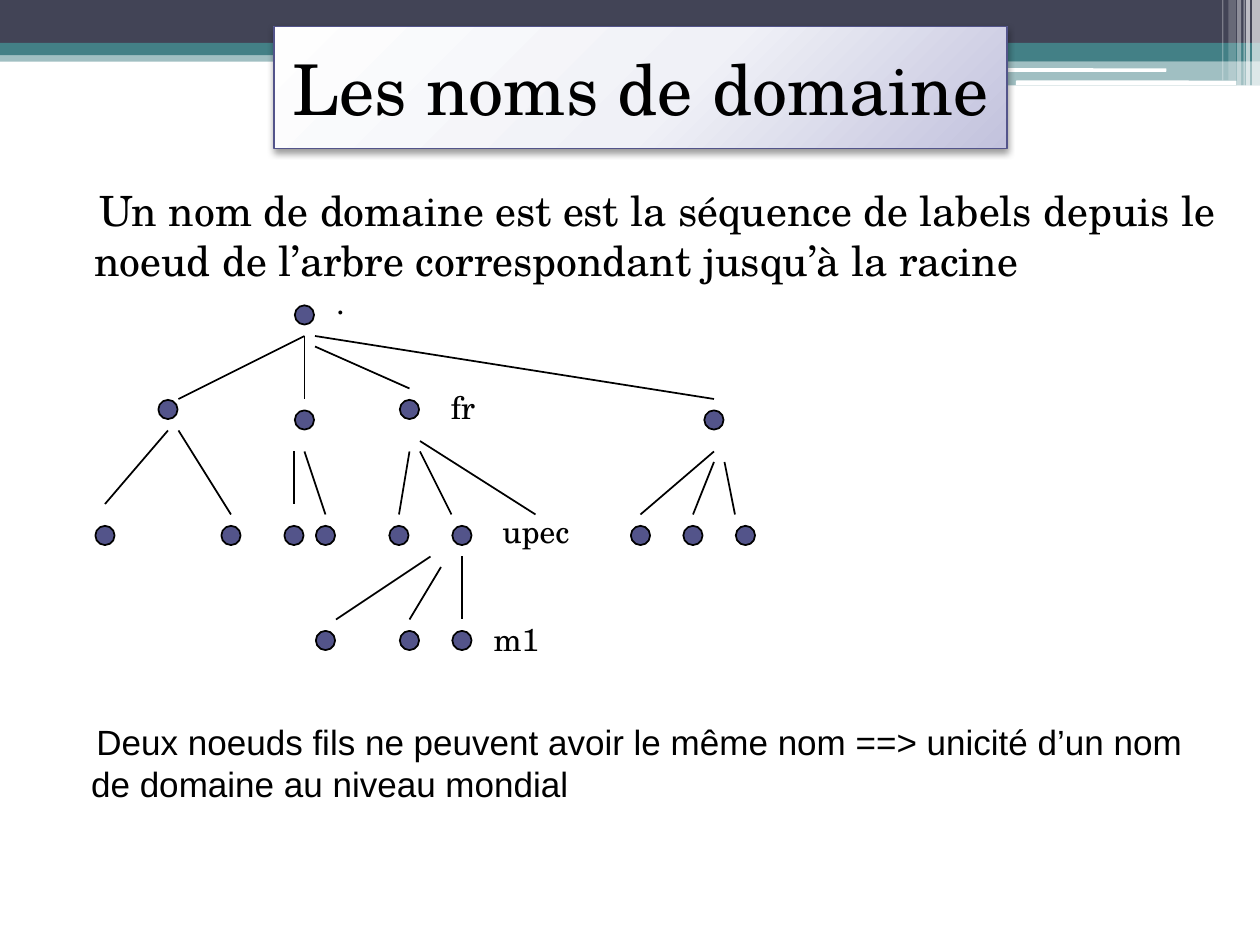
from dataclasses import dataclass
from typing import NamedTuple

from lxml.etree import SubElement
from pptx import Presentation
from pptx.dml.color import RGBColor
from pptx.enum.shapes import MSO_CONNECTOR, MSO_SHAPE
from pptx.enum.text import MSO_ANCHOR, MSO_AUTO_SIZE, PP_ALIGN
from pptx.oxml import parse_xml
from pptx.oxml.ns import nsdecls, qn
from pptx.util import Pt


@dataclass(frozen=True)
class Theme:
    ink: str = "000000"
    dark: str = "424456"
    teal: str = "438086"
    white: str = "FFFFFF"
    dot: str = "53548A"
    fade: tuple = ((0, "FEFEFE"), (55, "F0F1F7"), (100, "C2C2DD"))
    serif: str = "TeX Gyre Schola"
    sans: str = "Arial"
    head: float = 40
    lead: float = 23.8
    note: float = 20
    label: float = 18


class Box(NamedTuple):
    left: float
    top: float
    width: float
    height: float


class Bar(NamedTuple):
    box: Box
    hue: str
    alpha: int = 100
    kind: MSO_SHAPE = MSO_SHAPE.RECTANGLE


class Label(NamedTuple):
    text: str
    box: Box


class Edge(NamedTuple):
    x: int
    y: int
    ends: tuple


T = Theme()
STEP = 6
SIZE = 11
ROUND = MSO_SHAPE.ROUNDED_RECTANGLE

BARS = [
    Bar(Box(0, 28.8, 720, 6.5), T.teal, 50),
    Bar(Box(0, 0, 720, 24.5), T.dark),
    Bar(Box(0, 24.5, 720, 7), T.teal),
    Bar(Box(426, 28, 294, 7), T.teal),
    Bar(Box(426, 34.6, 294, 14.2), T.teal, 50),
    Bar(Box(425.5, 39, 241, 2), T.white, 100, ROUND),
    Bar(Box(580.5, 46, 126, 2.7), T.white, 100, ROUND),
    Bar(Box(715.5, 0, 4.5, 49), T.white, 65),
    Bar(Box(712, 0, 2.2, 49), T.white, 65),
    Bar(Box(710.6, 0, 0.7, 49), T.white, 60),
    Bar(Box(707, 0, 2.2, 49), T.white, 40),
    Bar(Box(702, 0, 4.3, 46), T.white, 20),
    Bar(Box(698.4, 0, 0.7, 46), T.white, 30),
]

NODES = {
    30: (29,),
    39: (16, 39),
    40: (29, 68),
    51: (10, 22, 28, 31, 38, 44, 61, 66, 71),
    61: (31, 39, 44),
}

EDGES = [
    Edge(29, 32, ((17, 38), (29, 38))),
    Edge(30, 33, ((39, 37),)),
    Edge(30, 32, ((68, 38),)),
    Edge(17, 41, ((22, 49),)),
    Edge(16, 41, ((10, 48),)),
    Edge(28, 43, ((28, 48),)),
    Edge(29, 43, ((31, 49),)),
    Edge(40, 42, ((51, 49),)),
    Edge(40, 43, ((43, 49),)),
    Edge(39, 43, ((38, 49),)),
    Edge(69, 44, ((70, 49),)),
    Edge(68, 44, ((66, 49),)),
    Edge(68, 43, ((61, 49),)),
    Edge(44, 53, ((44, 59),)),
    Edge(42, 54, ((39, 59),)),
    Edge(41, 53, ((32, 59),)),
]

LABELS = [
    Label(".", Box(185, 158.4, 20, 31)),
    Label("fr", Box(250.5, 218, 29, 31)),
    Label("upec", Box(280, 288.8, 54, 29)),
    Label("m1", Box(275, 350.5, 43, 31)),
]


def put(item, vals: dict) -> None:
    for name, val in vals.items():
        setattr(item, name, val)


def place(shape, box: Box) -> None:
    put(shape, {name: Pt(val) for name, val in box._asdict().items()})


def stroke(line, hue: str, width: float) -> None:
    line.color.rgb = RGBColor.from_string(hue)
    line.width = Pt(width)


def draw(slide, kind: MSO_SHAPE, box: Box, hue: str):
    shape = slide.shapes.add_shape(kind, *map(Pt, box))
    shape.shadow.inherit = False
    shape.fill.solid()
    shape.fill.fore_color.rgb = RGBColor.from_string(hue)
    return shape


def add_bar(slide, bar: Bar) -> None:
    shape = draw(slide, bar.kind, bar.box, bar.hue)
    shape.line.fill.background()
    if bar.alpha < 100:
        tint = shape._element.spPr.find(qn("a:solidFill"))[0]
        SubElement(tint, qn("a:alpha"), val=str(bar.alpha * 1000))


def add_node(slide, x: int, y: int) -> None:
    half = SIZE / 2
    box = Box(x * STEP - half, y * STEP - half, SIZE, SIZE)
    stroke(draw(slide, MSO_SHAPE.OVAL, box, T.dot).line, T.ink, 1)


def add_edge(slide, edge: Edge) -> None:
    for x, y in edge.ends:
        ends = [Pt(n * STEP) for n in (edge.x, edge.y, x, y)]
        line = slide.shapes.add_connector(MSO_CONNECTOR.STRAIGHT, *ends)
        stroke(line.line, T.ink, 1)
        SubElement(line._element.spPr, qn("a:effectLst"))


def write(shape, text: str, face: str, size: float, frame: dict, para: dict):
    put(shape.text_frame, {"auto_size": MSO_AUTO_SIZE.NONE, "word_wrap": True, **frame})
    line = shape.text_frame.paragraphs[0]
    put(line, para)
    run = line.add_run()
    run.text = text
    put(run.font, {"name": face, "size": Pt(size)})
    run.font.color.rgb = RGBColor.from_string(T.ink)
    return line


def indent(line, left: float, first: float) -> None:
    props = line._p.get_or_add_pPr()
    props.set("marL", str(Pt(left)))
    props.set("indent", str(Pt(first)))
    SubElement(props, qn("a:buNone"))


def add_label(slide, label: Label) -> None:
    shape = slide.shapes.add_textbox(*map(Pt, label.box))
    frame = {"word_wrap": False, "auto_size": MSO_AUTO_SIZE.SHAPE_TO_FIT_TEXT}
    write(shape, label.text, T.serif, T.label, frame, {})


def add_title(title) -> None:
    place(title, Box(156.5, 15, 419, 70))
    stroke(title.line, T.dot, 0.75)
    title.shadow.inherit = False
    props = title._element.spPr
    stops = "".join(
        f'<a:gs pos="{pos * 1000}"><a:srgbClr val="{hue}"/></a:gs>' for pos, hue in T.fade
    )
    props.find(qn("a:ln")).addprevious(parse_xml(
        f'<a:gradFill {nsdecls("a")} rotWithShape="1"><a:gsLst>{stops}</a:gsLst>'
        '<a:path path="circle"><a:fillToRect l="-40000" t="-90000" r="140000" b="190000"/>'
        "</a:path></a:gradFill>"
    ))
    props.find(qn("a:effectLst")).append(parse_xml(
        f'<a:outerShdw {nsdecls("a")} blurRad="{Pt(4.1)}" dist="{Pt(2)}" dir="5400000" '
        f'rotWithShape="0"><a:srgbClr val="{T.ink}"><a:alpha val="40000"/></a:srgbClr>'
        "</a:outerShdw>"
    ))
    write(title, "Les noms de domaine", T.serif, T.head,
          {"vertical_anchor": MSO_ANCHOR.MIDDLE}, {"alignment": PP_ALIGN.CENTER})


def main() -> None:
    deck = Presentation()
    put(deck, {"slide_width": Pt(720), "slide_height": Pt(540)})
    slide = deck.slides.add_slide(deck.slide_layouts[1])
    title, body = slide.placeholders
    for bar in BARS:
        add_bar(slide, bar)
    for shape in (title, body):
        slide.shapes._spTree.append(shape._element)

    add_title(title)
    place(body, Box(18, 102, 684, 60))
    lead = write(
        body,
        "Un nom de domaine est est la séquence de labels depuis le "
        "noeud de l’arbre correspondant jusqu’à la racine",
        T.serif, T.lead, {}, {"space_before": Pt(3)},
    )
    indent(lead, 28.8, 3)

    for edge in EDGES:
        add_edge(slide, edge)
    for y, row in NODES.items():
        for x in row:
            add_node(slide, x, y)
    for label in LABELS:
        add_label(slide, label)

    note = write(
        slide.shapes.add_textbox(Pt(18), Pt(408), Pt(684), Pt(90)),
        "Deux noeuds fils ne peuvent avoir le même nom ==> "
        "unicité d’un nom de domaine au niveau mondial",
        T.sans, T.note, {}, {"space_before": Pt(4)},
    )
    indent(note, 27, 3)
    deck.save("out.pptx")


if __name__ == "__main__":
    main()
